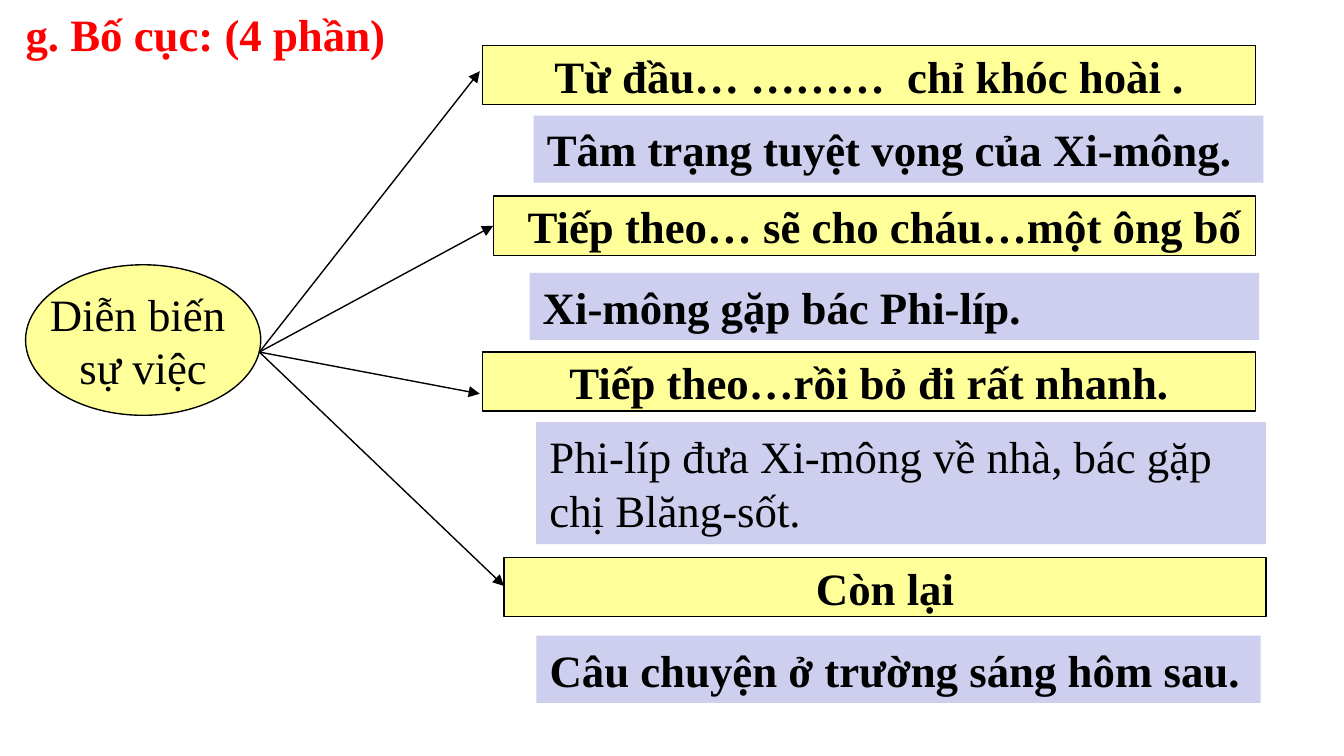
from pptx import Presentation
from pptx.dml.color import RGBColor
from pptx.enum.shapes import MSO_CONNECTOR, MSO_SHAPE
from pptx.enum.text import MSO_ANCHOR, MSO_AUTO_SIZE, PP_ALIGN
from pptx.oxml.ns import qn
from pptx.util import Inches, Pt
from lxml.etree import SubElement

BLACK = RGBColor(0, 0, 0)
RED = RGBColor(0xFF, 0, 0)
YELLOW = RGBColor(0xFF, 0xFF, 0x99)
LILAC = RGBColor(0xCE, 0xCE, 0xEF)
HUB = (1.93, 2.62)
PARTS = [
    ("Từ đầu… ………  chỉ khóc hoài .", (3.59, 0.34, 5.75, 0.44), (3.57, 0.53), 0.1),
    ("Tiếp theo… sẽ cho cháu…một ông bố", (3.67, 1.46, 5.67, 0.44), (3.67, 1.68), 0.25),
    ("Tiếp theo…rồi bỏ đi rất nhanh.", (3.59, 2.62, 5.75, 0.44), (3.57, 2.93), 0.1),
    ("Còn lại", (3.75, 4.15, 5.67, 0.44), (3.75, 4.36), 0.1),
]
IDEAS = [
    ("Tâm trạng tuyệt vọng của Xi-mông.", (3.97, 0.86, 5.43, 0.5), True),
    ("Xi-mông gặp bác Phi-líp.", (3.94, 2.03, 5.43, 0.5), True),
    ("Phi-líp đưa Xi-mông về nhà, bác gặp chị Blăng-sốt.", (3.99, 3.14, 5.43, 0.91), False),
    ("Câu chuyện ở trường sáng hôm sau.", (3.99, 4.73, 5.39, 0.5), True),
]


def write(shape, text, color=BLACK, bold=True, align=PP_ALIGN.LEFT, anchor=MSO_ANCHOR.TOP, wrap=True):
    """Fill a shape with text in the common font."""
    frame = shape.text_frame
    frame.text = text
    frame.word_wrap = wrap
    frame.auto_size = MSO_AUTO_SIZE.NONE
    frame.vertical_anchor = anchor
    for para in frame.paragraphs:
        para.alignment = align
        para.line_spacing = 1.0
        para.space_before = Pt(0)
        font = para.font
        font.name = "Times New Roman"
        font.size = Pt(24)
        font.bold = bold
        font.color.rgb = color


def add_shape(slide, kind, box, fill):
    """Add a flat filled shape without an outline."""
    shape = slide.shapes.add_shape(kind, *map(Inches, box))
    shape.shadow.inherit = False
    shape.fill.solid()
    shape.fill.fore_color.rgb = fill
    shape.line.fill.background()
    return shape


def add_node(slide, kind, text, box, bold=True, inset=0.1):
    """Add an outlined yellow node with centred text."""
    node = add_shape(slide, kind, box, YELLOW)
    node.line.color.rgb = BLACK
    node.line.width = Pt(0.75)
    write(node, text, bold=bold, align=PP_ALIGN.CENTER, anchor=MSO_ANCHOR.MIDDLE, wrap=False)
    node.text_frame.margin_left = Inches(inset)


def add_idea(slide, text, box, bold):
    """Add a lilac box that sums up one part."""
    write(add_shape(slide, MSO_SHAPE.RECTANGLE, box, LILAC), text, bold=bold)


def add_arrow(slide, start, end):
    """Add a thin black arrow."""
    arrow = slide.shapes.add_connector(MSO_CONNECTOR.STRAIGHT, *map(Inches, start + end))
    arrow.line.color.rgb = BLACK
    arrow.line.width = Pt(0.75)
    props = arrow._element.spPr
    SubElement(props.find(qn("a:ln")), qn("a:tailEnd"), type="triangle")
    SubElement(props, qn("a:effectLst"))


def add_title(slide, text, box):
    """Place and format the title."""
    title = slide.shapes.title
    title.left, title.top, title.width, title.height = map(Inches, box)
    write(title, text, RED)


def main():
    """Build the slide and save it."""
    deck = Presentation()
    deck.slide_width, deck.slide_height = Inches(10), Inches(45 / 8)
    slide = deck.slides.add_slide(deck.slide_layouts[5])
    add_title(slide, "g. Bố cục: (4 phần)", (0.09, 0, 3.66, 0.5))
    add_node(slide, MSO_SHAPE.OVAL, "Diễn biến \nsự việc", (0.19, 1.97, 1.75, 1.12), bold=False)
    for text, box, tip, inset in PARTS:
        add_node(slide, MSO_SHAPE.RECTANGLE, text, box, inset=inset)
        add_arrow(slide, HUB, tip)
    for text, box, bold in IDEAS:
        add_idea(slide, text, box, bold)
    deck.save("out.pptx")


if __name__ == "__main__":
    main()
